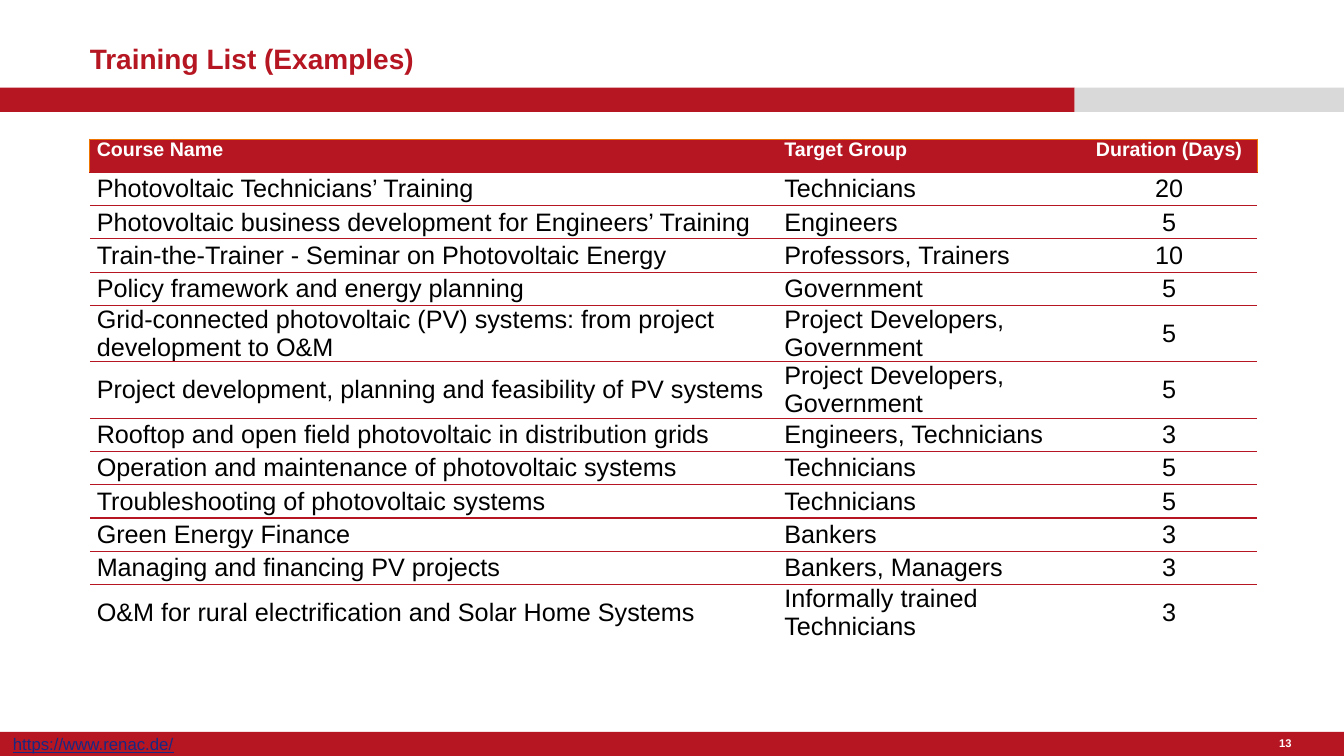
from lxml import etree
from pptx import Presentation
from pptx.dml.color import RGBColor
from pptx.enum.shapes import MSO_SHAPE
from pptx.enum.text import MSO_ANCHOR, MSO_AUTO_SIZE, PP_ALIGN
from pptx.oxml.ns import qn
from pptx.util import Inches, Pt

RECT = MSO_SHAPE.RECTANGLE
TOP, MID, LOW = MSO_ANCHOR.TOP, MSO_ANCHOR.MIDDLE, MSO_ANCHOR.BOTTOM
LEFT, CENTER, RIGHT = PP_ALIGN.LEFT, PP_ALIGN.CENTER, PP_ALIGN.RIGHT
NO_FIT = MSO_AUTO_SIZE.NONE

WIDE, HIGH = 13.33, 7.5
EDGE = 0.89  # left edge of title and table
BAR = 0.24  # height of the colour bars
SPLIT = 10.66  # where the red bar turns grey
RED, GREY, ORANGE = "B51621", "D9D9D9", "EE7600"
WHITE, BLACK, BLUE = "FFFFFF", "000000", "172983"
PLAIN = "{2D5ABB26-0587-4C30-8999-92F81FD0307C}"  # table style without grid

COLS = [6.82, 3.01, 1.75]
ALIGNS = [LEFT, LEFT, CENTER]
ROW = 0.33
HEAD = ("Course Name", "Target Group", "Duration (Days)")
COURSES = [
    ("Photovoltaic Technicians’ Training", "Technicians", 20),
    ("Photovoltaic business development for Engineers’ Training", "Engineers", 5),
    ("Train-the-Trainer - Seminar on Photovoltaic Energy", "Professors, Trainers", 10),
    ("Policy framework and energy planning", "Government", 5),
    ("Grid-connected photovoltaic (PV) systems: from project development to O&M",
     "Project Developers, Government", 5),
    ("Project development, planning and feasibility of PV systems",
     "Project Developers, Government", 5),
    ("Rooftop and open field photovoltaic in distribution grids",
     "Engineers, Technicians", 3),
    ("Operation and maintenance of photovoltaic systems", "Technicians", 5),
    ("Troubleshooting of photovoltaic systems", "Technicians", 5),
    ("Green Energy Finance", "Bankers", 3),
    ("Managing and financing PV projects", "Bankers, Managers", 3),
    ("O&M for rural electrification and Solar Home Systems",
     "Informally trained Technicians", 3),
]


def rgb(code):
    return RGBColor.from_string(code)


def style(para, size, color, bold=False, align=LEFT):
    para.alignment = align
    font = para.font
    font.name, font.size, font.bold = "Arial", Pt(size), bold
    font.color.rgb = rgb(color)


def inset(part, left, top, right, bottom):
    part.margin_left, part.margin_top = Inches(left), Inches(top)
    part.margin_right, part.margin_bottom = Inches(right), Inches(bottom)


def add_bar(slide, left, top, width, color):
    bar = slide.shapes.add_shape(
        RECT, Inches(left), Inches(top), Inches(width), Inches(BAR))
    bar.shadow.inherit = False
    bar.fill.solid()
    bar.fill.fore_color.rgb = rgb(color)
    bar.line.fill.background()


def add_text(slide, text, left, top, width, height):
    box = slide.shapes.add_textbox(
        Inches(left), Inches(top), Inches(width), Inches(height))
    frame = box.text_frame
    frame.word_wrap = True
    frame.text = text
    return frame


def add_header(slide, height):
    # Title above a two-colour bar
    title = slide.shapes.title
    title.left, title.top = Inches(EDGE), 0
    title.width, title.height = Inches(SPLIT - EDGE), Inches(height)
    frame = title.text_frame
    frame.text = "Training List (Examples)"
    frame.auto_size, frame.vertical_anchor = NO_FIT, LOW
    inset(frame, 0, 0.04, 0, 0.12)
    para = frame.paragraphs[0]
    para.line_spacing = 0.9
    style(para, 20, RED, True)
    add_bar(slide, 0, height, SPLIT, RED)
    add_bar(slide, SPLIT, height, WIDE - SPLIT, GREY)


def add_footer(slide, top):
    # Bar with web address and page number
    add_bar(slide, 0, top, WIDE, RED)
    web = add_text(slide, "https://www.renac.de/", 0.03, top - 0.03, 2.43, 0.3)
    style(web.paragraphs[0], 12, BLUE)
    web.paragraphs[0].font.underline = True
    page = add_text(slide, "13", 11.97, top, 0.84, BAR)
    page.vertical_anchor = MID
    inset(page, 0, 0, 0, 0.02)
    style(page.paragraphs[0], 8, WHITE, True, RIGHT)


def add_edge(cell, side, color, width):
    line = etree.SubElement(
        cell._tc.get_or_add_tcPr(), qn(f"a:ln{side}"), w=str(Pt(width)))
    fill = etree.SubElement(line, qn("a:solidFill"))
    etree.SubElement(fill, qn("a:srgbClr"), val=color)


def fill_cell(cell, row, col):
    # Edges come before the fill: left, right, top, bottom
    if row == 0:
        if col == 0:
            add_edge(cell, "L", ORANGE, 0.75)
        if col == len(COLS) - 1:
            add_edge(cell, "R", ORANGE, 0.75)
        add_edge(cell, "T", ORANGE, 0.75)
        cell.fill.solid()
        cell.fill.fore_color.rgb = rgb(RED)
    else:
        add_edge(cell, "T", RED, 1)
        if row < len(COURSES):
            add_edge(cell, "B", RED, 1)
        cell.fill.background()


def add_list(slide, left, top):
    # Course table
    rows = [HEAD, *COURSES]
    table = slide.shapes.add_table(
        len(rows), len(COLS), Inches(left), Inches(top),
        Inches(sum(COLS)), Inches(ROW * len(rows))).table
    table._tbl.tblPr.find(qn("a:tableStyleId")).text = PLAIN
    table.horz_banding = False
    for col, width in enumerate(COLS):
        table.columns[col].width = Inches(width)
    for i, row in enumerate(rows):
        table.rows[i].height = Inches(ROW)
        for j, value in enumerate(row):
            cell = table.cell(i, j)
            fill_cell(cell, i, j)
            cell.text = str(value)
            cell.vertical_anchor = MID if i else TOP
            inset(cell, 0.07, 0, 0.07, 0)
            size, color = (18, BLACK) if i else (14, WHITE)
            style(cell.text_frame.paragraphs[0], size, color, i == 0, ALIGNS[j])


def main():
    deck = Presentation()
    deck.slide_width, deck.slide_height = Inches(WIDE), Inches(HIGH)
    slide = deck.slides.add_slide(deck.slide_layouts[5])
    add_header(slide, 0.87)
    add_list(slide, EDGE, 1.38)
    add_footer(slide, HIGH - BAR)
    deck.save("out.pptx")


if __name__ == "__main__":
    main()
